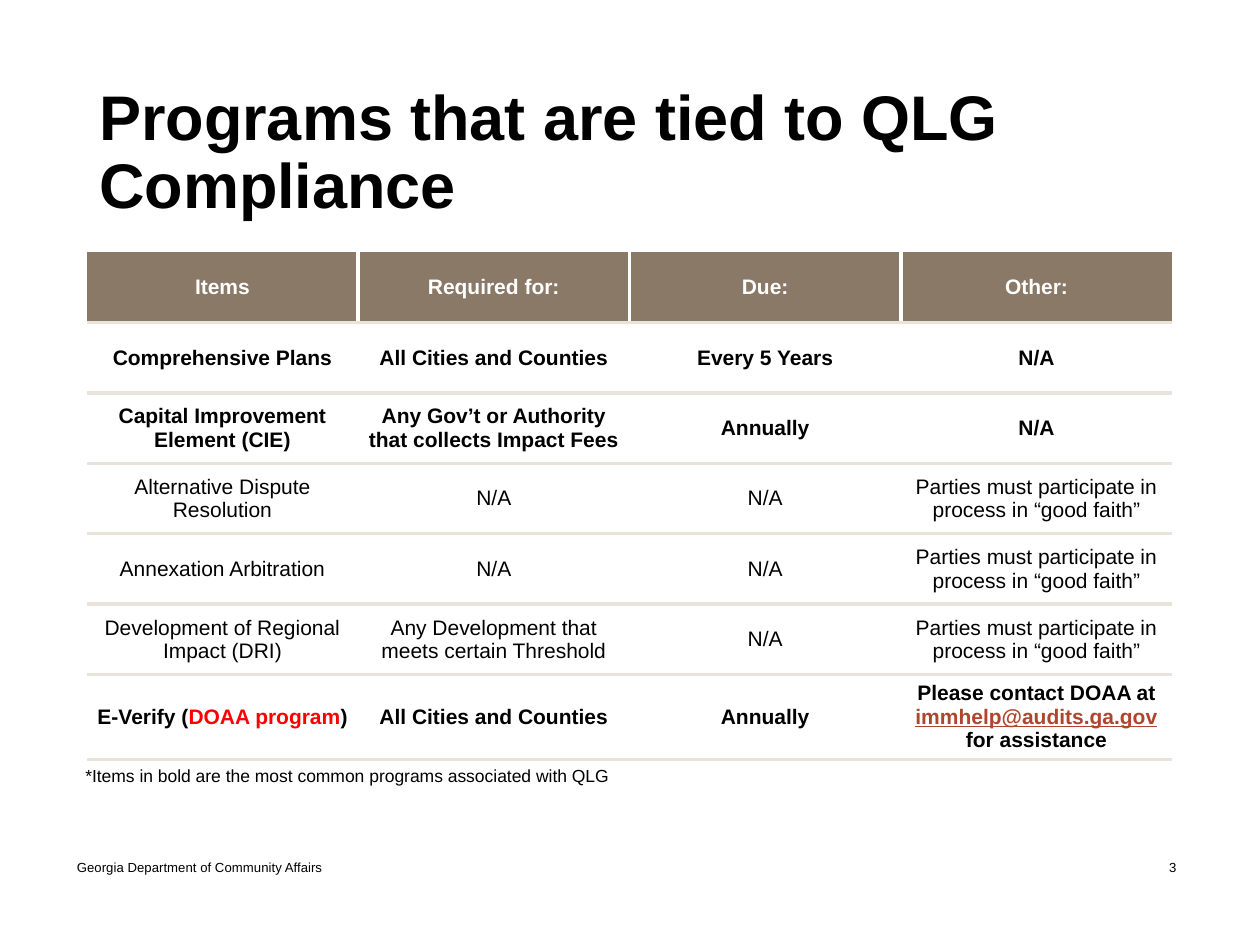
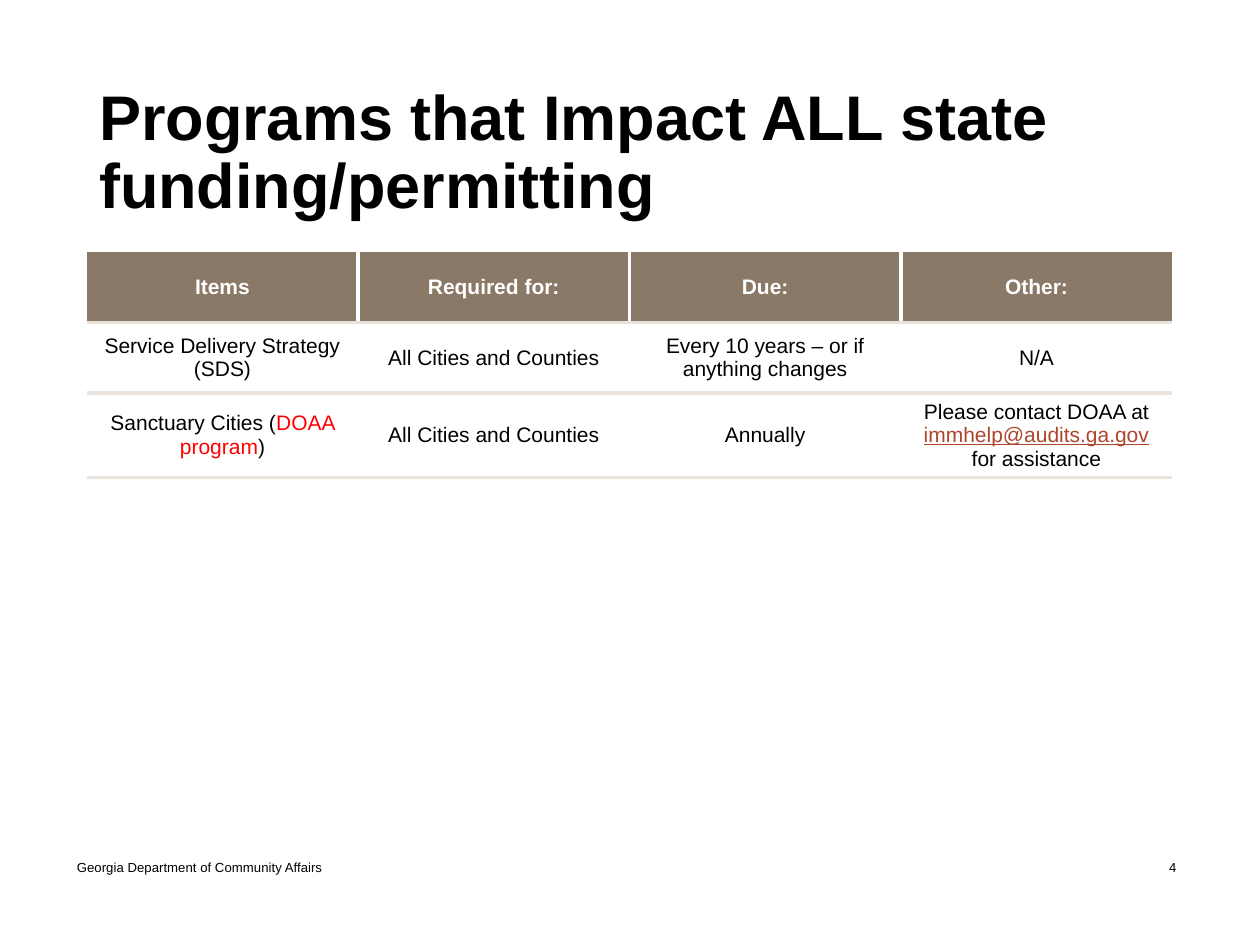
from dataclasses import dataclass
from typing import NamedTuple

from lxml.etree import SubElement
from pptx import Presentation
from pptx.dml.color import RGBColor
from pptx.enum.text import MSO_ANCHOR, PP_ALIGN
from pptx.oxml.ns import qn
from pptx.util import Cm, Pt


@dataclass(frozen=True)
class Theme:
    font: str = "Arial"
    ink: str = "000000"
    header_ink: str = "FFFFFF"
    header_fill: str = "8A7967"
    divider: str = "FFFFFF"
    rule: str = "E9E3DC"
    highlight: str = "FF0000"
    link: str = "AE462D"
    title_size: float = 36
    table_size: float = 12
    note_size: float = 10
    footer_size: float = 7.5
    border: float = 2.25


class Area(NamedTuple):
    left: float
    top: float
    width: float
    height: float


class Span(NamedTuple):
    text: str
    color: str = ""
    underline: bool = False


class Row(NamedTuple):
    cells: tuple
    bold: bool = False


class Page(NamedTuple):
    number: int
    title: str
    rows: tuple
    note: str = ""


THEME = Theme()
NO_STYLE = "{2D5ABB26-0587-4C30-8999-92F81FD0307C}"
FOOTER = "Georgia Department of Community Affairs"
TITLE_AREA = Area(1.75, 1.52, 21.87, 3.18)
FOOTER_AREA = Area(1.3, 16.97, 8.59, 1.02)
NUMBER_AREA = Area(23.01, 16.54, 1.27, 1.88)
NOTE_AREA = Area(1.47, 15.29, 17.04, 0.69)
TABLE_LEFT, TABLE_TOP = 1.75, 5.08
COLUMN_WIDTH, ROW_HEIGHT = 5.47, 1.42

HEADERS = ("Items", "Required for:", "Due:", "Other:")
EVERYONE = "All Cities and Counties"
GOOD_FAITH = "Parties must participate in process in “good faith”"
DOAA = Span("DOAA program", THEME.highlight)
CONTACT = (
    Span("Please contact DOAA at "),
    Span("immhelp@audits.ga.gov", THEME.link, True),
    Span(" for assistance"),
)

PAGES = (
    Page(3, "Programs that are tied to QLG Compliance", (
        Row(("Comprehensive Plans", EVERYONE, "Every 5 Years", "N/A"), True),
        Row(("Capital Improvement Element (CIE)",
             "Any Gov’t or Authority that collects Impact Fees",
             "Annually", "N/A"), True),
        Row(("Alternative Dispute Resolution", "N/A", "N/A", GOOD_FAITH)),
        Row(("Annexation Arbitration", "N/A", "N/A", GOOD_FAITH)),
        Row(("Development of Regional Impact (DRI)",
             "Any Development that meets certain Threshold",
             "N/A", GOOD_FAITH)),
        Row(((Span("E-Verify ("), DOAA, Span(")")),
             EVERYONE, "Annually", CONTACT), True),
    ), "*Items in bold are the most common programs associated with QLG"),
    Page(4, "Programs that Impact ALL state funding/permitting", (
        Row(("Service Delivery Strategy (SDS)", EVERYONE,
             "Every 10 years – or if anything changes", "N/A")),
        Row(((Span("Sanctuary Cities ("), DOAA, Span(")")),
             EVERYONE, "Annually", CONTACT)),
    )),
)


def write(frame, text: str | tuple, *, size: float, color: str = THEME.ink,
          bold: bool = False, align=PP_ALIGN.LEFT, spacing: float = 1.0) -> None:
    para = frame.paragraphs[0]
    para.alignment = align
    para.line_spacing = spacing
    for span in (Span(text),) if isinstance(text, str) else text:
        run = para.add_run()
        run.text = span.text
        run.font.name = THEME.font
        run.font.size = Pt(size)
        run.font.bold = bold
        run.font.underline = span.underline
        run.font.color.rgb = RGBColor.from_string(span.color or color)


def add_text(slide, area: Area, text: str, *, anchor=MSO_ANCHOR.MIDDLE,
             **style) -> None:
    box = slide.shapes.add_textbox(*(Cm(length) for length in area))
    box.text_frame.word_wrap = True
    box.text_frame.vertical_anchor = anchor
    write(box.text_frame, text, **style)


def set_borders(cell_properties, borders: dict[str, str]) -> None:
    sides = [side for side in ("lnL", "lnR", "lnT", "lnB") if side in borders]
    for position, side in enumerate(sides):
        line = SubElement(cell_properties, qn(f"a:{side}"),
                          w=str(Pt(THEME.border)))
        fill = SubElement(line, qn("a:solidFill"))
        SubElement(fill, qn("a:srgbClr"), val=borders[side])
        cell_properties.insert(position, line)


def cell_borders(row: int, column: int) -> dict[str, str]:
    borders = {"lnB": THEME.rule}
    if row > 0:
        borders["lnT"] = THEME.rule
    elif column > 0:
        borders["lnL"] = THEME.divider
    if row == 0 and column < len(HEADERS) - 1:
        borders["lnR"] = THEME.divider
    return borders


def add_program_table(slide, body: tuple) -> None:
    rows = (Row(HEADERS, True), *body)
    frame = slide.shapes.add_table(
        len(rows), len(HEADERS), Cm(TABLE_LEFT), Cm(TABLE_TOP),
        Cm(COLUMN_WIDTH * len(HEADERS)), Cm(ROW_HEIGHT * len(rows)))
    table = frame.table
    table.horz_banding = False
    for style in frame.element.iter(qn("a:tableStyleId")):
        style.text = NO_STYLE
    for column in table.columns:
        column.width = Cm(COLUMN_WIDTH)
    for table_row in table.rows:
        table_row.height = Cm(ROW_HEIGHT)
    for row_index, row in enumerate(rows):
        for column_index, content in enumerate(row.cells):
            cell = table.cell(row_index, column_index)
            cell.vertical_anchor = MSO_ANCHOR.MIDDLE
            cell.margin_left = cell.margin_right = Cm(0.18)
            cell.margin_top = cell.margin_bottom = Cm(0.09)
            is_header = row_index == 0
            if is_header:
                cell.fill.solid()
                cell.fill.fore_color.rgb = RGBColor.from_string(THEME.header_fill)
            else:
                cell.fill.background()
            write(cell.text_frame, content, size=THEME.table_size,
                  color=THEME.header_ink if is_header else THEME.ink,
                  bold=row.bold, align=PP_ALIGN.CENTER)
    for index, properties in enumerate(frame.element.iter(qn("a:tcPr"))):
        set_borders(properties, cell_borders(*divmod(index, len(HEADERS))))


def add_page(deck, page: Page) -> None:
    slide = deck.slides.add_slide(deck.slide_layouts[6])
    add_text(slide, FOOTER_AREA, FOOTER, size=THEME.footer_size)
    add_text(slide, NUMBER_AREA, str(page.number), size=THEME.footer_size,
             align=PP_ALIGN.CENTER)
    add_program_table(slide, page.rows)
    add_text(slide, TITLE_AREA, page.title, size=THEME.title_size, bold=True,
             spacing=0.9)
    if page.note:
        add_text(slide, NOTE_AREA, page.note, size=THEME.note_size,
                 anchor=MSO_ANCHOR.TOP)


def main() -> None:
    deck = Presentation()
    deck.slide_width, deck.slide_height = Cm(25.4), Cm(19.05)
    for page in PAGES:
        add_page(deck, page)
    deck.save("out.pptx")


if __name__ == "__main__":
    main()
